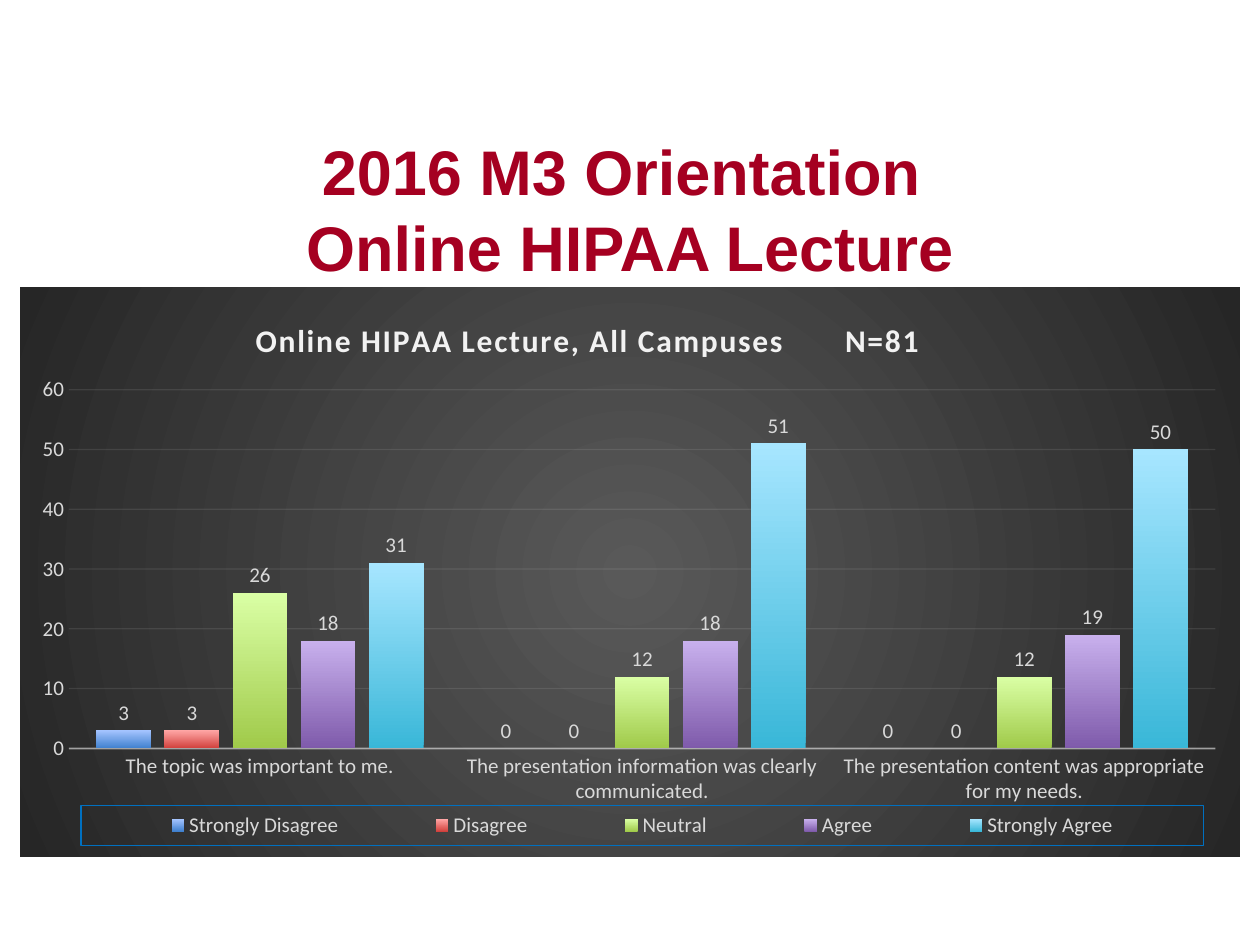
"""Build the orientation survey slide with a title and a clustered column chart."""
from lxml import etree
from pptx import Presentation
from pptx.chart.data import CategoryChartData
from pptx.dml.color import RGBColor
from pptx.enum.chart import XL_CHART_TYPE, XL_LABEL_POSITION, XL_LEGEND_POSITION, XL_TICK_MARK
from pptx.enum.text import MSO_ANCHOR, PP_ALIGN
from pptx.oxml import parse_xml
from pptx.util import Inches, Pt

COLUMN = XL_CHART_TYPE.COLUMN_CLUSTERED
OUTSIDE = XL_LABEL_POSITION.OUTSIDE_END
BOTTOM = XL_LEGEND_POSITION.BOTTOM
NO_TICK = XL_TICK_MARK.NONE
MIDDLE = MSO_ANCHOR.MIDDLE
CENTER = PP_ALIGN.CENTER
A = "http://schemas.openxmlformats.org/drawingml/2006/main"
C = "http://schemas.openxmlformats.org/drawingml/2006/chart"
COLORS = {"title": "A50021", "light": "F2F2F2", "label": "D9D9D9",
          "inner": "595959", "outer": "262626", "frame": "0070C0"}
SERIES = [
    ("Strongly Disagree", (3, 0, 0), "3F80CE", "A4C4FF"),
    ("Disagree", (3, 0, 0), "D1403C", "FFA6A5"),
    ("Neutral", (26, 12, 12), "A0CA4A", "DAFFA5"),
    ("Agree", (18, 18, 19), "7F5BAB", "C8B0ED"),
    ("Strongly Agree", (31, 51, 50), "39B7D8", "A7E6FF"),
]


def write(frame, parts, size, color, font):
    para = frame.paragraphs[0]
    para.alignment = CENTER
    for words, track in parts:
        if words == "\n":
            para.add_line_break()
            continue
        run = para.add_run()
        run.text = words
        run.font.size = Pt(size)
        run.font.bold = True
        run.font.name = font
        run.font.color.rgb = RGBColor.from_string(COLORS[color])
        if track:
            run.font._element.set("spc", str(track))


def stroke(line, color, width, alpha=100):
    line.width = Pt(width)
    line.color.rgb = RGBColor.from_string(COLORS[color])
    for tone in line.fill._xPr.iter(f"{{{A}}}srgbClr"):
        etree.SubElement(tone, f"{{{A}}}alpha", val=str(alpha * 1000))


deck = Presentation()
deck.slide_width, deck.slide_height = Inches(10), Inches(7.5)
slide = deck.slides.add_slide(deck.slide_layouts[6])

head = slide.shapes.add_textbox(Inches(0.5), Inches(1.03), Inches(9), Inches(1.25)).text_frame
head.word_wrap = True
head.vertical_anchor = MIDDLE
write(head, [("2016 M3 Orientation ", 0), ("\n", 0), ("Online HIPAA Lecture", 0)],
      size=36, color="title", font="Arial")

data = CategoryChartData()
data.categories = ["The topic was important to me.",
                   "The presentation information was clearly communicated.",
                   "The presentation content was appropriate for my needs."]
for name, values, dark, pale in SERIES:
    data.add_series(name, values)
chart = slide.shapes.add_chart(
    COLUMN, Inches(0.16), Inches(2.28), Inches(9.68), Inches(4.52), data).chart
chart.font.size = Pt(12)
chart.font.name = "Calibri"
chart.font.color.rgb = RGBColor.from_string(COLORS["label"])

chart.has_title = True
write(chart.chart_title.text_frame,
      [("Online HIPAA Lecture, All Campuses", 100), (" ", 3000), ("N=81", 100)],
      size=18, color="light", font="Calibri")

plot = chart.plots[0]
plot.gap_width, plot.overlap = 100, -24
plot.vary_by_categories = False
for series, (name, values, dark, pale) in zip(plot.series, SERIES):
    fill = series.format.fill
    fill.gradient()
    fill.gradient_angle = 90
    for stop, tone, place in zip(fill.gradient_stops, (dark, pale), (0, 1)):
        stop.color.rgb = RGBColor.from_string(tone)
        stop.position = place
    series.invert_if_negative = False
    labels = series.data_labels
    labels.show_value = True
    labels.position = OUTSIDE
    labels.font.size = Pt(12)
    labels.font.name = "Calibri"
    labels.font.color.rgb = RGBColor.from_string(COLORS["label"])

across, up = chart.category_axis, chart.value_axis
for axis in (across, up):
    axis.major_tick_mark = axis.minor_tick_mark = NO_TICK
    axis.tick_labels.font.size = Pt(12)
    axis.tick_labels.font.name = "Calibri"
    axis.tick_labels.font.color.rgb = RGBColor.from_string(COLORS["label"])
up.minimum_scale, up.maximum_scale, up.major_unit = 0, 60, 10
up.format.line.fill.background()
stroke(across.format.line, "light", 1, alpha=54)
stroke(up.major_gridlines.format.line, "light", 0.75, alpha=10)

chart.has_legend = True
legend = chart.legend
legend.position = BOTTOM
legend.include_in_layout = False
legend.font.size = Pt(12)
legend.font.name = "Calibri"
legend.font.color.rgb = RGBColor.from_string(COLORS["label"])
edge = parse_xml(
    f'<c:spPr xmlns:c="{C}" xmlns:a="{A}"><a:ln w="9525"><a:solidFill>'
    f'<a:srgbClr val="{COLORS["frame"]}"/></a:solidFill></a:ln></c:spPr>')
legend._element.find(f"{{{C}}}txPr").addprevious(edge)

root = chart._chartSpace
places = [
    (chart.chart_title._element, 1, "", {"x": 0.19, "y": 0.05}),
    (root.chart.plotArea, 0, '<c:layoutTarget val="inner"/>',
     {"x": 0.04, "y": 0.18, "w": 0.94, "h": 0.63}),
    (legend._element, 1, "", {"x": 0.05, "y": 0.91, "w": 0.92, "h": 0.07}),
]
for part, index, target, box in places:
    for old in part.findall(f"{{{C}}}layout"):
        part.remove(old)
    modes = "".join(f'<c:{key}Mode val="edge"/>' for key in "xy")
    sizes = "".join(f'<c:{key} val="{value}"/>' for key, value in box.items())
    part.insert(index, parse_xml(
        f'<c:layout xmlns:c="{C}"><c:manualLayout>{target}{modes}{sizes}'
        '</c:manualLayout></c:layout>'))

root.chart.addnext(parse_xml(
    f'<c:spPr xmlns:c="{C}" xmlns:a="{A}"><a:gradFill><a:gsLst>'
    f'<a:gs pos="0"><a:srgbClr val="{COLORS["inner"]}"/></a:gs>'
    f'<a:gs pos="100000"><a:srgbClr val="{COLORS["outer"]}"/></a:gs></a:gsLst>'
    '<a:path path="circle"><a:fillToRect l="50000" t="50000" r="50000" b="50000"/></a:path>'
    '</a:gradFill><a:ln><a:noFill/></a:ln></c:spPr>'))

deck.save("out.pptx")
